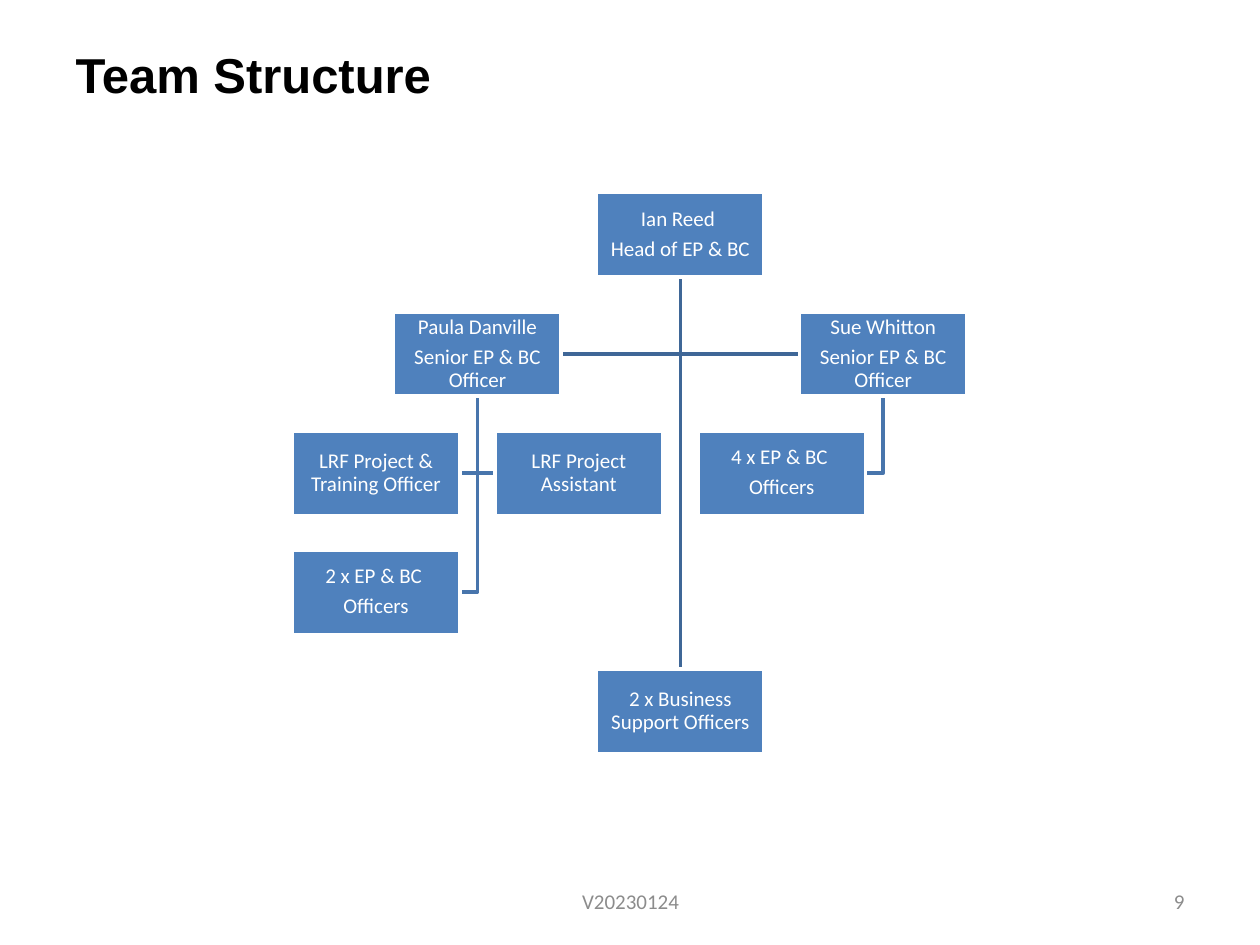
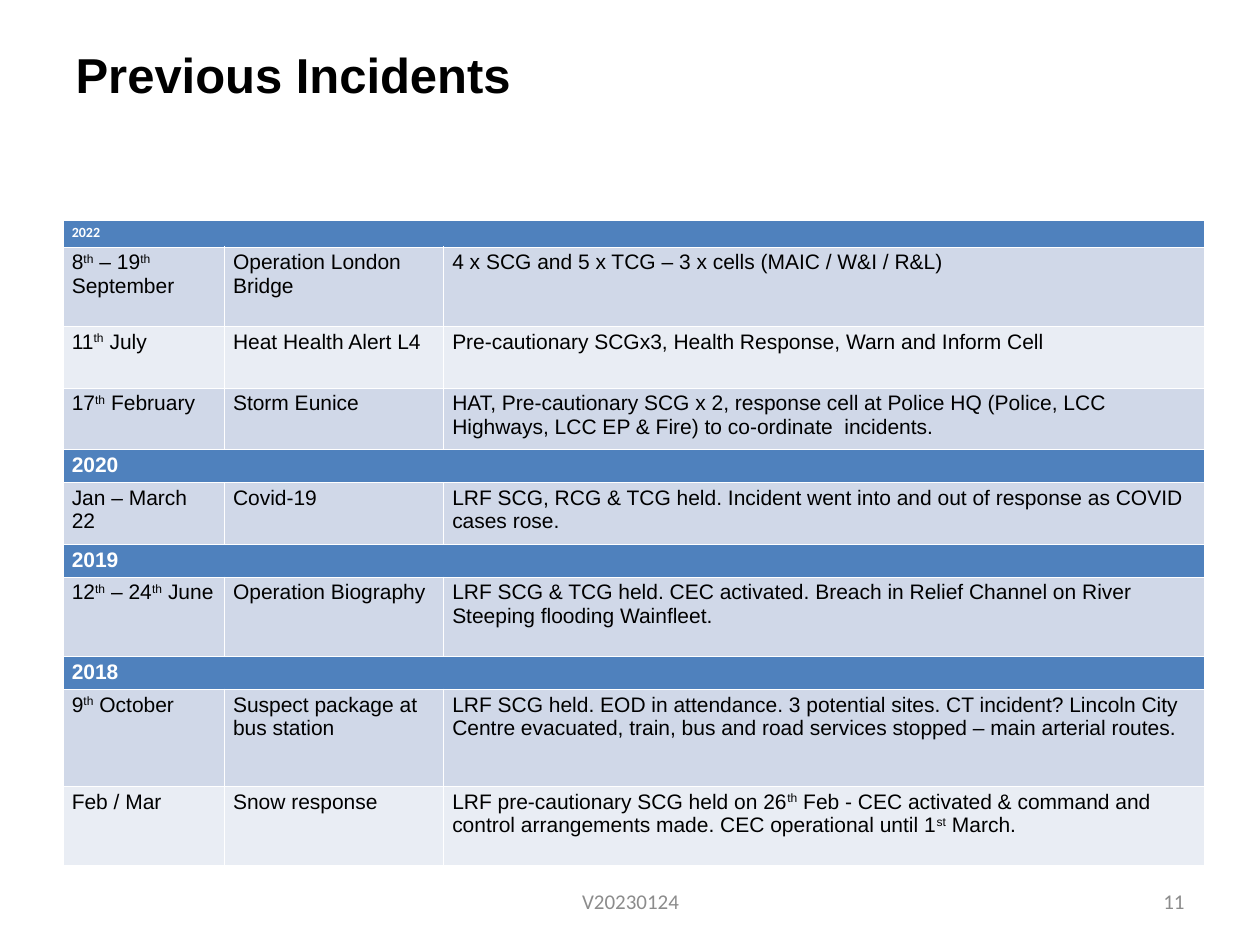
from lxml import etree
from pptx import Presentation
from pptx.dml.color import RGBColor as RGB
from pptx.enum.shapes import MSO_CONNECTOR as LINE, MSO_SHAPE as SHAPE
from pptx.enum.text import MSO_ANCHOR as ANCHOR, PP_ALIGN as ALIGN
from pptx.oxml.ns import qn
from pptx.util import Inches as In, Pt

BLUE, PALE, LIGHT = "4F81BD", "D0D8E8", "E9EDF4"
WHITE, BLACK, GREY = "FFFFFF", "000000", "8C8C8C"
TOP_LINE, SUB_LINE = "3F6797", "4875AC"


def hue(code):
    return RGB.from_string(code)


def write(frame, text, size=12, font="Calibri", color=BLACK, bold=False,
          align=ALIGN.LEFT, anchor=ANCHOR.TOP, inset=None, lead=None, after=None):
    """Fill a text frame; a newline starts a paragraph, ^th^ is raised."""
    frame.word_wrap = True
    frame.vertical_anchor = anchor
    if inset is not None:
        frame.margin_left = frame.margin_right = In(inset)
        frame.margin_top = frame.margin_bottom = In(inset)
    for i, part in enumerate(text.split("\n")):
        para = frame.add_paragraph() if i else frame.paragraphs[0]
        para.alignment = align
        para.line_spacing = lead
        para.space_after = after
        for j, piece in enumerate(part.split("^")):
            run = para.add_run()
            run.text = piece
            face = run.font
            face.size, face.name, face.bold = Pt(size), font, bold
            face.color.rgb = hue(color)
            if j % 2:
                run._r.get_or_add_rPr().set("baseline", "30000")


deck = Presentation()
deck.slide_width, deck.slide_height = In(10), In(7.5)

# Title and footer of each slide
pages = []
for head, num in [("Team Structure", "9"), ("Previous Incidents", "11")]:
    page = deck.slides.add_slide(deck.slide_layouts[5])
    title = page.shapes.title
    title.left, title.top, title.width, title.height = In(0.5), In(0.3), In(4.97), In(1.25)
    write(title.text_frame, head, size=28, font="Arial", bold=True)
    for left, width, text, align in [(3.42, 3.17, "V20230124", ALIGN.CENTER),
                                     (7.17, 2.33, num, ALIGN.RIGHT)]:
        foot = page.shapes.add_textbox(In(left), In(6.95), In(width), In(0.4))
        write(foot.text_frame, text, color=GREY, align=align, anchor=ANCHOR.MIDDLE)
    pages.append(page)
team, past = pages

# Team chart: each box has a column and a row of the grid
X, Y, COL, ROW = 2.32, 1.53, 0.805, 0.945
WIDE, HIGH = 1.33, 0.67
staff = {
    "head": (3, 0, "Ian Reed \nHead of EP & BC"),
    "support": (3, 4, "2 x Business Support Officers"),
    "paula": (1, 1, "Paula Danville\nSenior EP & BC Officer"),
    "training": (0, 2, "LRF Project & Training Officer"),
    "helper": (2, 2, "LRF Project Assistant"),
    "pair": (0, 3, "2 x EP & BC \nOfficers"),
    "sue": (5, 1, "Sue Whitton\nSenior EP & BC Officer"),
    "four": (4, 2, "4 x EP & BC \nOfficers"),
}
links = [("sue", "four"), ("head", "sue"), ("paula", "pair"), ("paula", "helper"),
         ("paula", "training"), ("head", "paula"), ("head", "support")]
for boss, aide in links:
    bcol, brow, _ = staff[boss]
    acol, arow, _ = staff[aide]
    mid, start = In(X + bcol * COL + WIDE / 2), In(Y + brow * ROW + HIGH)
    if acol == bcol:
        link = team.shapes.add_connector(LINE.STRAIGHT, mid, start, mid, In(Y + arow * ROW))
    else:
        side = In(X + acol * COL + (WIDE if acol < bcol else 0))
        turn = In(Y + arow * ROW + HIGH / 2)
        path = team.shapes.build_freeform(mid, start)
        path.add_line_segments([(mid, turn), (side, turn)], close=False)
        link = path.convert_to_shape()
        link.fill.background()
    link.line.color.rgb = hue(TOP_LINE if boss == "head" else SUB_LINE)
    link.line.width = Pt(2)
    etree.SubElement(link._element.spPr, qn("a:effectLst"))

for col, row, text in staff.values():
    box = team.shapes.add_shape(SHAPE.RECTANGLE, In(X + col * COL), In(Y + row * ROW),
                                In(WIDE), In(HIGH))
    box.shadow.inherit = False
    box.fill.solid()
    box.fill.fore_color.rgb = hue(BLUE)
    box.line.color.rgb = hue(WHITE)
    box.line.width = Pt(2)
    write(box.text_frame, text, color=WHITE, align=ALIGN.CENTER, anchor=ANCHOR.MIDDLE,
          inset=0.01, lead=0.9, after=Pt(4.2))

# Incident table: a row with one text is a year band
rows = [
    (0.21, "2022"),
    (0.63, "8^th^ – 19^th^ September ", "Operation London Bridge",
     "4 x SCG and 5 x TCG – 3 x cells (MAIC / W&I / R&L)"),
    (0.49, "11^th^ July", "Heat Health Alert L4",
     "Pre-cautionary SCGx3, Health Response, Warn and Inform Cell"),
    (0.49, "17^th^ February", "Storm Eunice",
     "HAT, Pre-cautionary SCG x 2, response cell at Police HQ (Police, LCC Highways, "
     "LCC EP & Fire) to co-ordinate  incidents."),
    (0.21, "2020"),
    (0.49, "Jan – March 22", "Covid-19",
     "LRF SCG, RCG & TCG held. Incident went into and out of response as COVID "
     "cases rose."),
    (0.21, "2019"),
    (0.63, "12^th^ – 24^th^ June", "Operation Biography",
     "LRF SCG & TCG held. CEC activated. Breach in Relief Channel on River "
     "Steeping flooding Wainfleet."),
    (0.21, "2018"),
    (0.77, "9^th^ October", "Suspect package at bus station",
     "LRF SCG held. EOD in attendance. 3 potential sites. CT incident? Lincoln "
     "City Centre evacuated, train, bus and road services stopped – main arterial routes."),
    (0.63, "Feb / Mar", "Snow response",
     "LRF pre-cautionary SCG held on 26^th^ Feb - CEC activated & command and "
     "control arrangements made. CEC operational until 1^st^ March."),
]
cols = [1.28, 1.74, 6.04]
grid = past.shapes.add_table(len(rows), len(cols), In(0.5), In(1.75), In(sum(cols)),
                             In(sum(row[0] for row in rows))).table
for c, width in enumerate(cols):
    grid.columns[c].width = In(width)

band = 0
for r, (high, *texts) in enumerate(rows):
    grid.rows[r].height = In(high)
    year = len(texts) == 1
    if year:
        grid.cell(r, 0).merge(grid.cell(r, 2))
        band = r
    fill = BLUE if year else PALE if (r - band) % 2 else LIGHT
    for c, text in enumerate(texts):
        cell = grid.cell(r, c)
        props = cell._tc.get_or_add_tcPr()
        for tag in ("a:lnL", "a:lnR", "a:lnT", "a:lnB"):
            edge = etree.SubElement(props, qn(tag), w=str(Pt(0.57)))
            paint = etree.SubElement(edge, qn("a:solidFill"))
            etree.SubElement(paint, qn("a:srgbClr"), val=WHITE)
        cell.fill.solid()
        cell.fill.fore_color.rgb = hue(fill)
        cell.margin_left = cell.margin_right = In(0.07)
        cell.margin_top = cell.margin_bottom = In(0.03)
        write(cell.text_frame, text, size=12 if r else 8, font="Arial" if r else "Calibri",
              color=WHITE if year else BLACK, bold=year)

deck.save("out.pptx")
